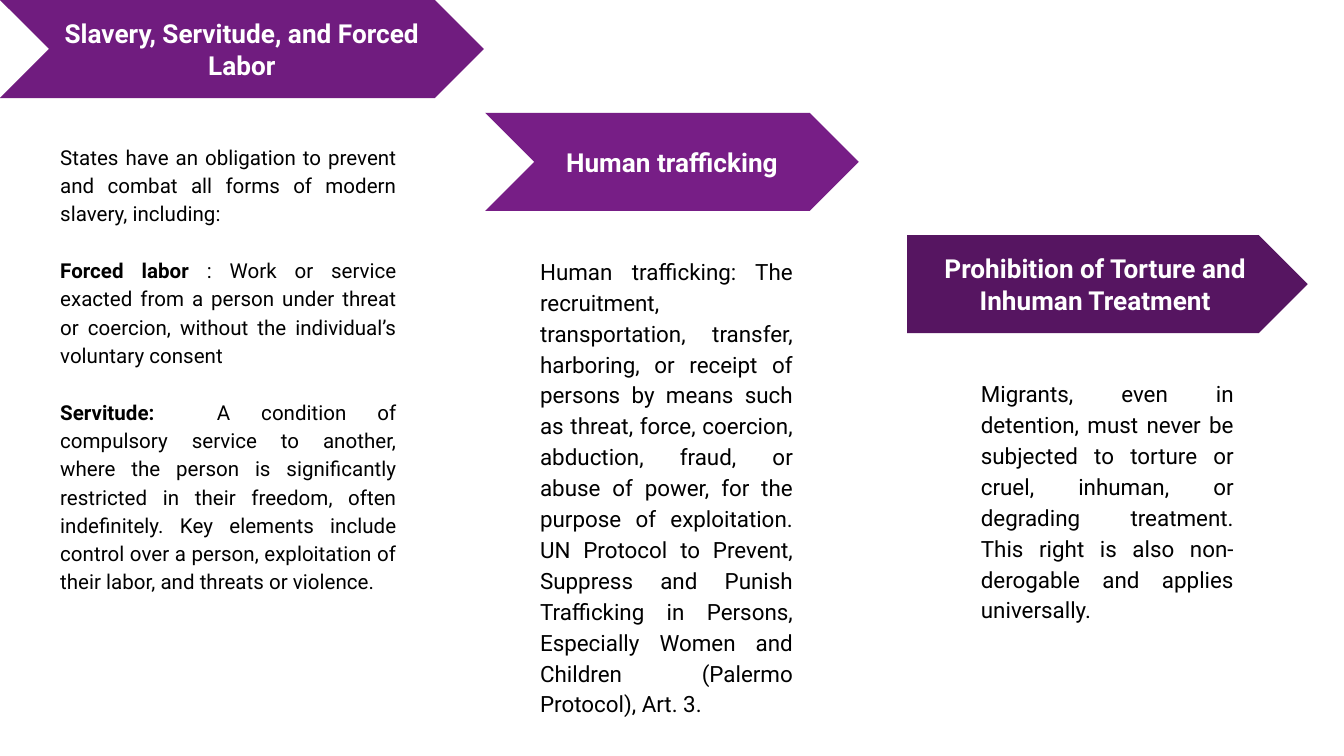
import pptx
import pptx.util
import pptx.dml.color
import pptx.enum.shapes
import pptx.enum.text

Inches, Pt = pptx.util.Inches, pptx.util.Pt
Shape = pptx.enum.shapes.MSO_SHAPE
Align = pptx.enum.text.PP_ALIGN
Anchor = pptx.enum.text.MSO_ANCHOR

FONT = "Roboto"
COLORS = {"left": "701C7F", "mid": "771E86", "right": "561561",
          "title": "FFFFFF", "body": "000000"}

# Content: each body paragraph is a (bold lead, plain text) pair
TOPICS = [
    {"title": "Slavery, Servitude, and Forced Labor",
     "kind": Shape.CHEVRON, "fill": "left", "size": 11,
     "arrow": (0, 0, 3.6), "text": (0.35, 0.95, 2.7),
     "body": [
         ("", "States have an obligation to prevent and combat all forms of "
              "modern slavery, including:"),
         ("Forced labor ", ": Work or service exacted from a person under "
          "threat or coercion, without the individual’s voluntary consent"),
         ("Servitude: ", " A condition of compulsory service to another, where "
          "the person is significantly restricted in their freedom, often "
          "indefinitely. Key elements include control over a person, "
          "exploitation of their labor, and threats or violence.")]},
    {"title": "Human trafficking",
     "kind": Shape.CHEVRON, "fill": "mid", "size": 12,
     "arrow": (3.61, 0.84, 2.78), "text": (3.92, 1.79, 2.08),
     "body": [
         ("", "Human trafficking: The recruitment, transportation, transfer, "
              "harboring, or receipt of persons by means such as threat, "
              "force, coercion, abduction, fraud, or abuse of power, for the "
              "purpose of exploitation. UN Protocol to Prevent, Suppress and "
              "Punish Trafficking in Persons, Especially Women and Children "
              "(Palermo Protocol), Art. 3.")]},
    {"title": "Prohibition of Torture and Inhuman Treatment",
     "kind": Shape.PENTAGON, "fill": "right", "size": 12,
     "arrow": (6.75, 1.75, 2.98), "text": (7.2, 2.7, 2.08),
     "body": [
         ("", "Migrants, even in detention, must never be subjected to torture "
              "or cruel, inhuman, or degrading treatment. This right is also "
              "non-derogable and applies universally.")]},
]
ARROW_H, TEXT_H = 0.73, 2.86
GAP = 15.2  # one blank line between body paragraphs, in points


def color(name):
    return pptx.dml.color.RGBColor.from_string(COLORS[name])


def box(place, height):
    return [Inches(n) for n in (*place, height)]


def setup(frame, anchor):
    frame.word_wrap = True
    frame.vertical_anchor = anchor
    frame.margin_left = frame.margin_right = Inches(0.1)
    frame.margin_top = frame.margin_bottom = Inches(0.1)


def style(run, size, name, bold):
    run.font.name = FONT
    run.font.size = Pt(size)
    run.font.bold = bold
    run.font.color.rgb = color(name)


def add_arrow(group, topic):
    arrow = group.shapes.add_shape(topic["kind"], *box(topic["arrow"], ARROW_H))
    arrow.adjustments[0] = 0.5
    arrow.shadow.inherit = False
    arrow.fill.solid()
    arrow.fill.fore_color.rgb = color(topic["fill"])
    arrow.line.fill.background()
    frame = arrow.text_frame
    setup(frame, Anchor.MIDDLE)
    frame.text = topic["title"]
    para = frame.paragraphs[0]
    para.alignment = Align.CENTER
    style(para.runs[0], 14, "title", True)


def add_body(group, topic):
    frame = group.shapes.add_textbox(*box(topic["text"], TEXT_H)).text_frame
    setup(frame, Anchor.TOP)
    for i, (lead, rest) in enumerate(topic["body"]):
        para = frame.add_paragraph() if i else frame.paragraphs[0]
        para.alignment = Align.JUSTIFY
        para.line_spacing = 1.15
        para.space_before = Pt(GAP if i else 0)
        for words, bold in ((lead, True), (rest, False)):
            if words:
                run = para.add_run()
                run.text = words
                style(run, topic["size"], "body", bold)


# A 16:9 slide
deck = pptx.Presentation()
deck.slide_width = Inches(10)
deck.slide_height = deck.slide_width * 9 // 16
slide = deck.slides.add_slide(deck.slide_layouts[6])

# One group per topic: arrow heading with its text below
for topic in TOPICS:
    group = slide.shapes.add_group_shape()
    add_arrow(group, topic)
    add_body(group, topic)

deck.save("out.pptx")
